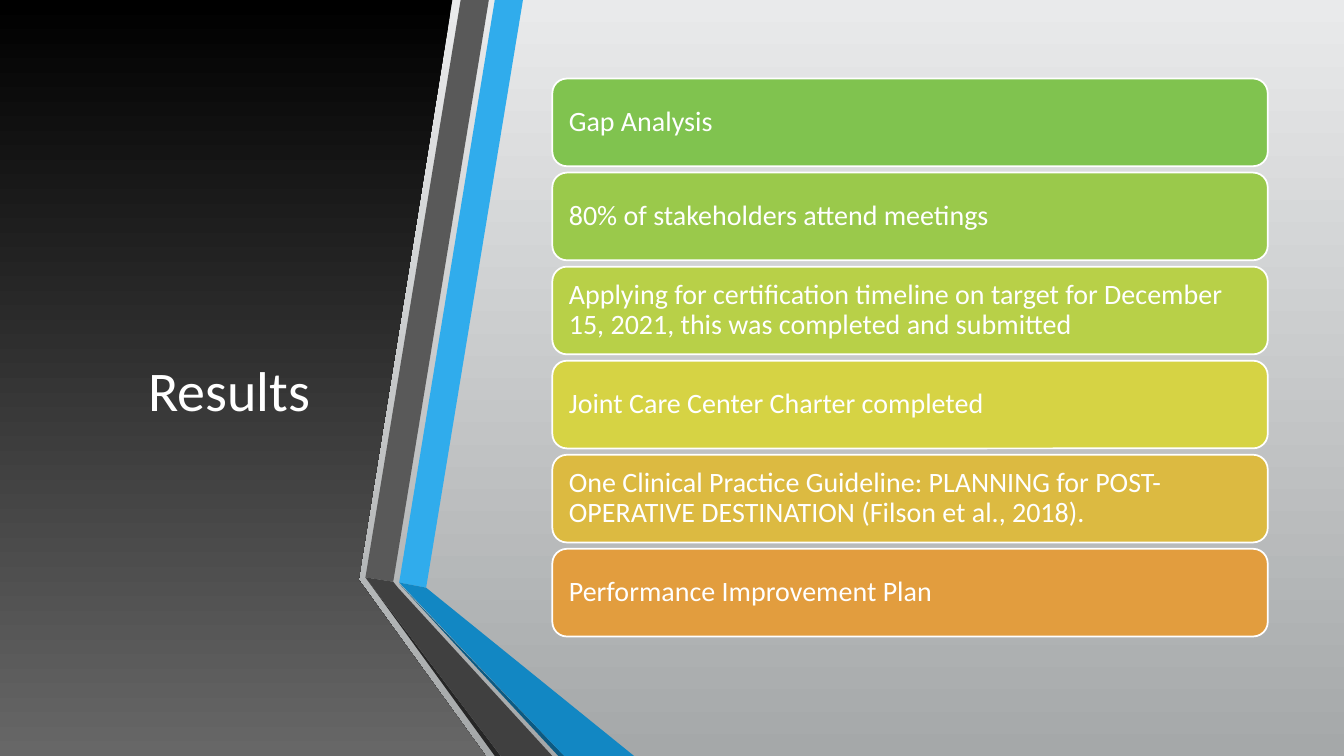
import dataclasses

import pptx
import pptx.dml.color
import pptx.enum.shapes
import pptx.enum.text
import pptx.util

Cm = pptx.util.Cm
Pt = pptx.util.Pt


@dataclasses.dataclass(frozen=True)
class Theme:
    font: str = "Calibri"
    title_size: int = 40
    body_size: int = 20
    text: str = "FFFFFF"
    outline: str = "FFFFFF"
    backdrop: tuple = ("E9EAEB", "A5A8A9")
    panel: tuple = ("000000", "676767")
    blue: str = "30ACEC"
    blue_fold: str = "1287C3"
    blue_edge: str = "0C5A82"
    grey: str = "595959"
    grey_fold: str = "404040"
    grey_edge: str = "262626"
    bars: tuple = ("80C34F", "9AC94B", "B8D048", "D6D344", "DCBA41", "E29D3E")


class Deck:
    """Draw styled elements on the current slide."""

    def __init__(self, theme, width, height):
        self.theme = theme
        self.prs = pptx.Presentation()
        self.prs.slide_width, self.prs.slide_height = Cm(width), Cm(height)
        self.s = self.prs.slides.add_slide(self.prs.slide_layouts[6])

    def paint(self, fill, colour):
        if isinstance(colour, str):
            fill.solid()
            fill.fore_color.rgb = pptx.dml.color.RGBColor.from_string(colour)
            return
        fill.gradient()
        fill.gradient_angle = 270
        for stop, rgb in zip(fill.gradient_stops, colour):
            stop.color.rgb = pptx.dml.color.RGBColor.from_string(rgb)

    def background(self, colour):
        self.paint(self.s.background.fill, colour)

    def polygon(self, points, colour):
        start, *rest = [(Cm(x), Cm(y)) for x, y in points]
        builder = self.s.shapes.build_freeform(*start)
        builder.add_line_segments(rest, close=True)
        sp = builder.convert_to_shape()
        sp.shadow.inherit = False
        self.paint(sp.fill, colour)
        sp.line.fill.background()

    def label(self, sp, text, size, align, insets):
        tf = sp.text_frame
        tf.word_wrap = True
        tf.vertical_anchor = pptx.enum.text.MSO_ANCHOR.MIDDLE
        tf.margin_left, tf.margin_top, tf.margin_right, tf.margin_bottom = map(Cm, insets)
        p = tf.paragraphs[0]
        p.text = text
        p.alignment = align
        p.line_spacing = 0.9
        p.font.name = self.theme.font
        p.font.size = Pt(size)
        p.font.color.rgb = pptx.dml.color.RGBColor.from_string(self.theme.text)

    def title(self, text, box, insets):
        sp = self.s.shapes.add_textbox(*map(Cm, box))
        self.label(sp, text, self.theme.title_size, pptx.enum.text.PP_ALIGN.CENTER, insets)

    def bar(self, text, box, colour):
        kind = pptx.enum.shapes.MSO_SHAPE.ROUNDED_RECTANGLE
        sp = self.s.shapes.add_shape(kind, *map(Cm, box))
        sp.shadow.inherit = False
        self.paint(sp.fill, colour)
        self.paint(sp.line.fill, self.theme.outline)
        sp.line.width = Pt(1.25)
        self.label(sp, text, self.theme.body_size, pptx.enum.text.PP_ALIGN.LEFT, [0.31] * 4)


WIDTH, HEIGHT = 33.87, 19.05
BAR_LEFT, BAR_TOP, BAR_WIDTH, BAR_HEIGHT, BAR_PITCH = 13.92, 1.98, 18.03, 2.21, 2.37
RESULTS = [
    "Gap Analysis",
    "80% of stakeholders attend meetings",
    "Applying for certification timeline on target for December 15, 2021, "
    "this was completed and submitted",
    "Joint Care Center Charter completed",
    "One Clinical Practice Guideline: PLANNING for POST-OPERATIVE DESTINATION "
    "(Filson et al., 2018).",
    "Performance Improvement Plan",
]


def main():
    theme = Theme()
    deck = Deck(theme, WIDTH, HEIGHT)
    deck.background(theme.backdrop)
    deck.polygon([(0, 0), (11.4, 0), (9.04, 14.61), (12.24, HEIGHT), (0, HEIGHT)], theme.panel)
    deck.title("Results", (1.5, 1.9, 7.34, 14.17), (1.47, 2, 0.25, 0.13))

    ribbons = [
        (theme.blue, [(10.06, 14.68), (10.74, 14.81), (13.18, 0), (12.47, 0)]),
        (theme.grey, [(12.32, 0), (11.61, 0), (9.21, 14.55), (9.91, 14.66)]),
        (theme.grey_edge, [(9.21, 14.55), (12.47, HEIGHT), (12.62, HEIGHT)]),
        (theme.blue_edge, [(10.06, 14.71), (14.07, HEIGHT), (14.22, HEIGHT)]),
        (theme.blue_fold, [(10.06, 14.68), (14.22, HEIGHT), (15.98, HEIGHT), (10.74, 14.81)]),
        (theme.grey_fold, [(13.92, HEIGHT), (10.03, 14.81), (9.91, 14.66), (9.21, 14.55),
                           (12.62, HEIGHT)]),
    ]
    for colour, points in ribbons:
        deck.polygon(points, colour)

    for i, (text, colour) in enumerate(zip(RESULTS, theme.bars)):
        deck.bar(text, (BAR_LEFT, BAR_TOP + i * BAR_PITCH, BAR_WIDTH, BAR_HEIGHT), colour)
    deck.prs.save("out.pptx")


if __name__ == "__main__":
    main()
